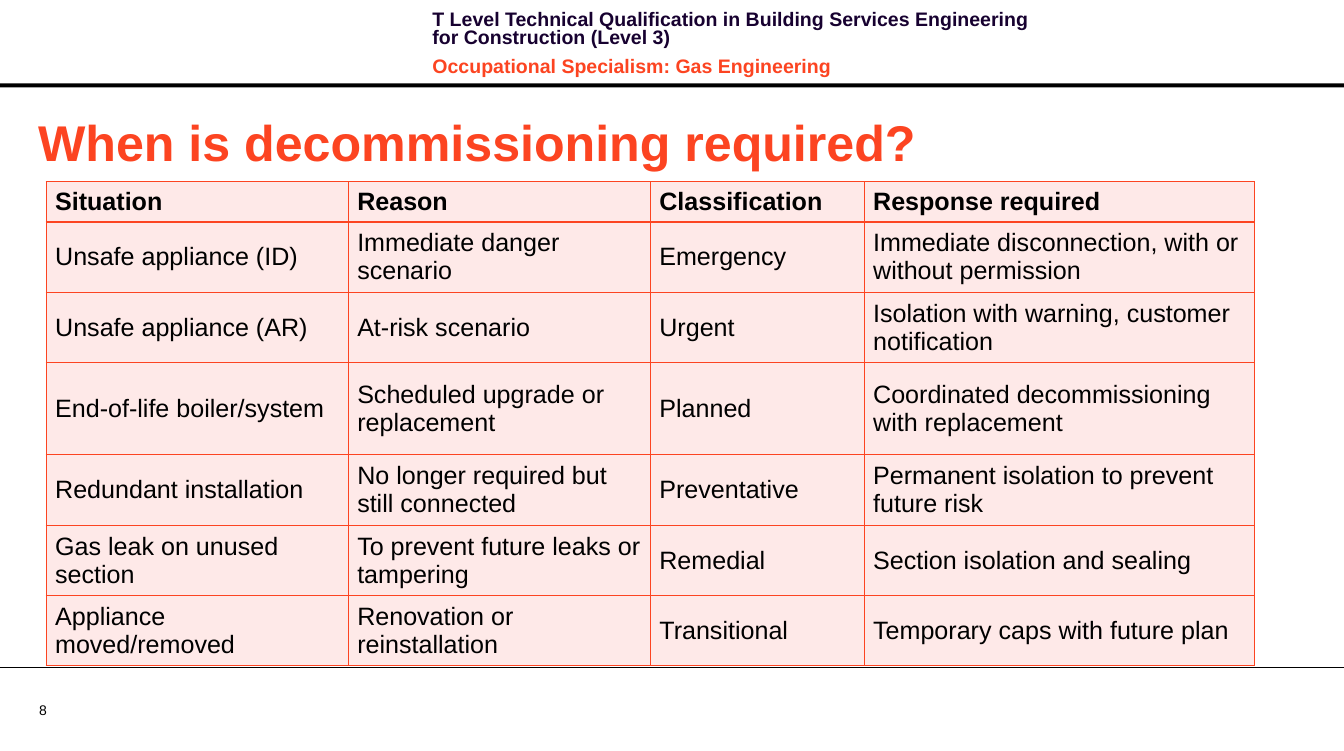
from dataclasses import dataclass

from lxml import etree
from pptx import Presentation
from pptx import util as u
from pptx.dml.color import RGBColor
from pptx.enum import shapes, text
from pptx.oxml import ns

COLORS = {"black": "000000", "navy": "170130", "orange": "FC4421", "blush": "FEE9E8"}
FONT = "Arial"
SLIDE_WIDTH, SLIDE_HEIGHT = 13.39, 7.48


@dataclass
class Column:
    heading: str
    width: float


@dataclass
class Case:
    situation: str
    reason: str
    classification: str
    response: str
    height: float = 0.65

    def values(self) -> list[str]:
        return [self.situation, self.reason, self.classification, self.response]


COLUMNS = [
    Column("Situation", 3.01),
    Column("Reason", 3.01),
    Column("Classification", 2.13),
    Column("Response required", 3.89),
]
HEADINGS = Case(*(column.heading for column in COLUMNS), height=0.37)
CASES = [
    Case("Unsafe appliance (ID)", "Immediate danger scenario", "Emergency",
         "Immediate disconnection, with or without permission"),
    Case("Unsafe appliance (AR)", "At-risk scenario", "Urgent",
         "Isolation with warning, customer notification"),
    Case("End-of-life boiler/system", "Scheduled upgrade or replacement", "Planned",
         "Coordinated decommissioning with replacement", height=0.92),
    Case("Redundant installation", "No longer required but still connected", "Preventative",
         "Permanent isolation to prevent future risk"),
    Case("Gas leak on unused section", "To prevent future leaks or tampering", "Remedial",
         "Section isolation and sealing"),
    Case("Appliance moved/removed", "Renovation or reinstallation", "Transitional",
         "Temporary caps with future plan"),
]


def rgb(name: str) -> RGBColor:
    return RGBColor.from_string(COLORS[name])


def write(para, wording: str, *, size: float, color: str = "black", bold: bool = False,
          line: float | None = None, before: float = 0, after: float = 0) -> None:
    """Fill a paragraph with one formatted span."""
    para.alignment = text.PP_ALIGN.LEFT
    para.space_before, para.space_after = u.Pt(before), u.Pt(after)
    if line:
        para.line_spacing = u.Pt(line)
    span = para.add_run()
    span.text = wording
    span.font.name, span.font.size, span.font.bold = FONT, u.Pt(size), bold
    span.font.color.rgb = rgb(color)


def add_box(page, left: float, top: float, width: float, height: float):
    box = page.shapes.add_textbox(*map(u.Inches, (left, top, width, height)))
    box.text_frame.word_wrap = True
    return box


def add_rules(page) -> None:
    band = page.shapes.add_shape(shapes.MSO_SHAPE.RECTANGLE, 0, u.Inches(0.83),
                                 u.Inches(SLIDE_WIDTH), u.Inches(0.04))
    band.shadow.inherit = False
    band.fill.solid()
    band.fill.fore_color.rgb = rgb("black")
    band.line.fill.background()

    rule = page.shapes.add_connector(shapes.MSO_CONNECTOR.STRAIGHT, 0, u.Inches(6.65),
                                     u.Inches(SLIDE_WIDTH), u.Inches(6.65))
    rule.line.color.rgb = rgb("black")
    rule.line.width = u.Pt(0.75)
    etree.SubElement(rule._element.spPr, ns.qn("a:effectLst"))


def add_header(page) -> None:
    frame = add_box(page, 4.21, 0.07, 6.37, 0.64).text_frame
    style = {"size": 14, "bold": True, "line": 13.1, "after": 4}
    write(frame.paragraphs[0],
          "T Level Technical Qualification in Building Services Engineering "
          "for Construction (Level 3)", color="navy", **style)
    write(frame.add_paragraph(), "Occupational Specialism: Gas Engineering",
          color="orange", before=4, **style)


def add_page_number(page) -> None:
    frame = add_box(page, 0.39, 6.99, 0.64, 0.17).text_frame
    frame.margin_left = frame.margin_top = frame.margin_right = frame.margin_bottom = 0
    frame.vertical_anchor = text.MSO_ANCHOR.MIDDLE
    write(frame.paragraphs[0], "8", size=10)


def set_title(page) -> None:
    title = page.shapes.title
    title.left, title.top = u.Inches(0.28), u.Inches(1.05)
    title.width, title.height = u.Inches(12.72), u.Inches(0.71)
    title.text_frame.auto_size = text.MSO_AUTO_SIZE.NONE
    title.text_frame.vertical_anchor = text.MSO_ANCHOR.MIDDLE
    write(title.text_frame.paragraphs[0], "When is decommissioning required?",
          size=36, color="orange", bold=True)


def set_borders(cell, color: str, width: float) -> None:
    properties = cell._tc.get_or_add_tcPr()
    for position, side in enumerate(("lnL", "lnR", "lnT", "lnB")):
        border = etree.Element(ns.qn(f"a:{side}"), w=str(u.Pt(width)))
        fill = etree.SubElement(border, ns.qn("a:solidFill"))
        etree.SubElement(fill, ns.qn("a:srgbClr"), val=COLORS[color])
        properties.insert(position, border)


def add_cases(page, cases: list[Case]) -> None:
    rows = [HEADINGS, *cases]
    width = sum(column.width for column in COLUMNS)
    height = sum(row.height for row in rows)
    table = page.shapes.add_table(len(rows), len(COLUMNS), u.Inches(0.46), u.Inches(1.81),
                                  u.Inches(width), u.Inches(height)).table
    table.first_row = table.horz_banding = False
    for index, column in enumerate(COLUMNS):
        table.columns[index].width = u.Inches(column.width)
    for row_index, row in enumerate(rows):
        table.rows[row_index].height = u.Inches(row.height)
        for column_index, wording in enumerate(row.values()):
            cell = table.cell(row_index, column_index)
            cell.margin_left = cell.margin_right = u.Inches(0.09)
            cell.margin_top = cell.margin_bottom = u.Inches(0.05)
            cell.vertical_anchor = text.MSO_ANCHOR.MIDDLE
            cell.fill.solid()
            cell.fill.fore_color.rgb = rgb("blush")
            set_borders(cell, "orange", 1)
            write(cell.text_frame.paragraphs[0], wording, size=18, bold=row is HEADINGS)


def main() -> None:
    deck = Presentation()
    deck.slide_width, deck.slide_height = u.Inches(SLIDE_WIDTH), u.Inches(SLIDE_HEIGHT)
    page = deck.slides.add_slide(deck.slide_layouts.get_by_name("Title Only"))

    # Header and footer
    add_rules(page)
    add_header(page)
    add_page_number(page)

    # Title and table
    set_title(page)
    add_cases(page, CASES)

    deck.save("out.pptx")


if __name__ == "__main__":
    main()
